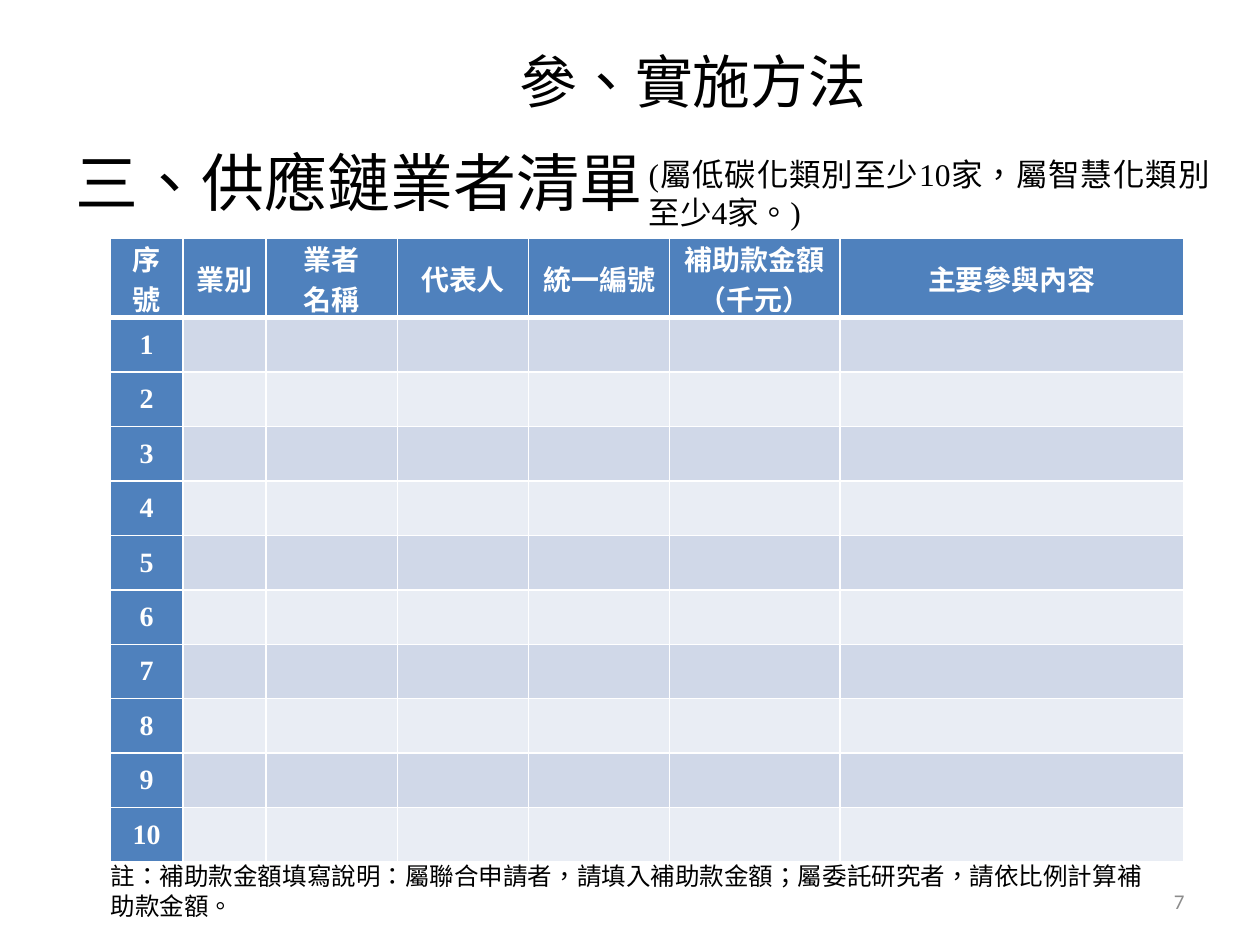
"""Builds the supply-chain company list slide with its empty ten-row table."""
from dataclasses import dataclass

from lxml import etree
from pptx import Presentation
from pptx import util as u
from pptx.dml.color import RGBColor
from pptx.enum import lang, text
from pptx.oxml import ns

Pt = u.Pt
ALIGN = text.PP_ALIGN
MIDDLE = text.MSO_ANCHOR.MIDDLE


@dataclass(frozen=True)
class Theme:
    """Colours, fonts and type sizes of the slide."""
    ink: str = "000000"
    white: str = "FFFFFF"
    muted: str = "8C8C8C"
    header: str = "4F81BD"
    bands: tuple = ("D0D8E8", "E9EDF4")
    cjk: str = "Noto Sans CJK SC"
    serif: str = "Times New Roman"
    sans: str = "Calibri"
    title: float = 33
    heading: float = 36
    remark: float = 18
    table: float = 16
    note: float = 14
    number: float = 12


THEME = Theme()
HEADERS = ("序號", "業別", "業者\n名稱", "代表人", "統一編號", "補助款金額（千元）", "主要參與內容")
COLUMN_WIDTHS = (41.76, 47.5, 75, 75, 80.6, 97.2, 196.6)
HEADER_HEIGHT, ROW_HEIGHT, ROW_COUNT = 45.5, 31.1, 10


def write_text(frame, content, *, size, font=THEME.serif, color=THEME.ink,
               bold=False, align=ALIGN.LEFT, leading=None):
    """Fill a text frame with one formatted paragraph per line."""
    for index, line in enumerate(content.split("\n")):
        para = frame.paragraphs[0] if index == 0 else frame.add_paragraph()
        para.alignment = align
        if leading:
            para.line_spacing = Pt(leading)
        span = para.add_run()
        span.text = line
        span.font.name = font
        span.font.size = Pt(size)
        span.font.bold = bold
        span.font.color.rgb = RGBColor.from_string(color)
        span.font.language_id = lang.MSO_LANGUAGE_ID.TRADITIONAL_CHINESE
        etree.SubElement(span.font._element, ns.qn("a:ea"), typeface=THEME.cjk)


def add_text(page, content, left, top, width, height, anchor=text.MSO_ANCHOR.TOP, **style):
    """Add a wrapping text box."""
    box = page.shapes.add_textbox(Pt(left), Pt(top), Pt(width), Pt(height))
    box.text_frame.word_wrap = True
    box.text_frame.vertical_anchor = anchor
    write_text(box.text_frame, content, **style)


def set_borders(cell, **widths):
    """Draw white cell borders with the given widths in points."""
    properties = cell._tc.get_or_add_tcPr()
    for index, (side, width) in enumerate(widths.items()):
        line = etree.Element(ns.qn(f"a:ln{side}"), w=str(Pt(width)))
        fill = etree.SubElement(line, ns.qn("a:solidFill"))
        etree.SubElement(fill, ns.qn("a:srgbClr"), val=THEME.white)
        properties.insert(index, line)


def style_cell(cell, content, fill, top, bottom):
    """Set the fill, insets, borders and text of one cell."""
    cell.fill.solid()
    cell.fill.fore_color.rgb = RGBColor.from_string(fill)
    cell.vertical_anchor = MIDDLE
    cell.margin_left = cell.margin_right = Pt(5.04)
    cell.margin_top = cell.margin_bottom = 0
    set_borders(cell, L=1, R=1, T=top, B=bottom)
    if content:
        write_text(cell.text_frame, content, size=THEME.table, color=THEME.white,
                   bold=True, align=ALIGN.CENTER)


def add_company_table(page, left, top):
    """Add the numbered table with a header row and banded empty cells."""
    height = HEADER_HEIGHT + ROW_COUNT * ROW_HEIGHT
    table = page.shapes.add_table(ROW_COUNT + 1, len(HEADERS), Pt(left), Pt(top),
                                  Pt(sum(COLUMN_WIDTHS)), Pt(height)).table
    table.first_col = True
    for column, width in zip(table.columns, COLUMN_WIDTHS):
        column.width = Pt(width)
    for number, row in enumerate(table.rows):
        row.height = Pt(ROW_HEIGHT if number else HEADER_HEIGHT)
        labels = (str(number),) + ("",) * (len(HEADERS) - 1) if number else HEADERS
        for cell, label in zip(row.cells, labels):
            fill = THEME.header if label else THEME.bands[(number - 1) % 2]
            style_cell(cell, label, fill, top=3 if number == 1 else 1,
                       bottom=1 if number else 3)


def main():
    """Build the slide and save the deck."""
    deck = Presentation()
    deck.slide_width, deck.slide_height = Pt(720), Pt(540)
    page = deck.slides.add_slide(deck.slide_layouts[6])
    add_text(page, "三、供應鏈業者清單", 36, 77.8, 648, 62, size=THEME.heading,
             font=THEME.cjk, leading=44)
    add_text(page, "7", 516.2, 500.4, 167.8, 28.8, MIDDLE, size=THEME.number,
             font=THEME.sans, color=THEME.muted, align=ALIGN.RIGHT)
    add_text(page, "參、實施方法", 80.6, 9.4, 630.7, 72.7, MIDDLE, size=THEME.title,
             font=THEME.cjk, align=ALIGN.CENTER, leading=40)
    add_company_table(page, 62.9, 136.1)
    add_text(page, "(屬低碳化類別至少10家，屬智慧化類別至少4家。)", 363.6, 85, 334.8, 51.1,
             size=THEME.remark, align=ALIGN.JUSTIFY, leading=21.7)
    add_text(page, "註：補助款金額填寫說明：屬聯合申請者，請填入補助款金額；屬委託研究者，請依比例計算補助款金額。",
             56.2, 488.2, 614.9, 41, size=THEME.note, leading=17.1)
    deck.save("out.pptx")


if __name__ == "__main__":
    main()
